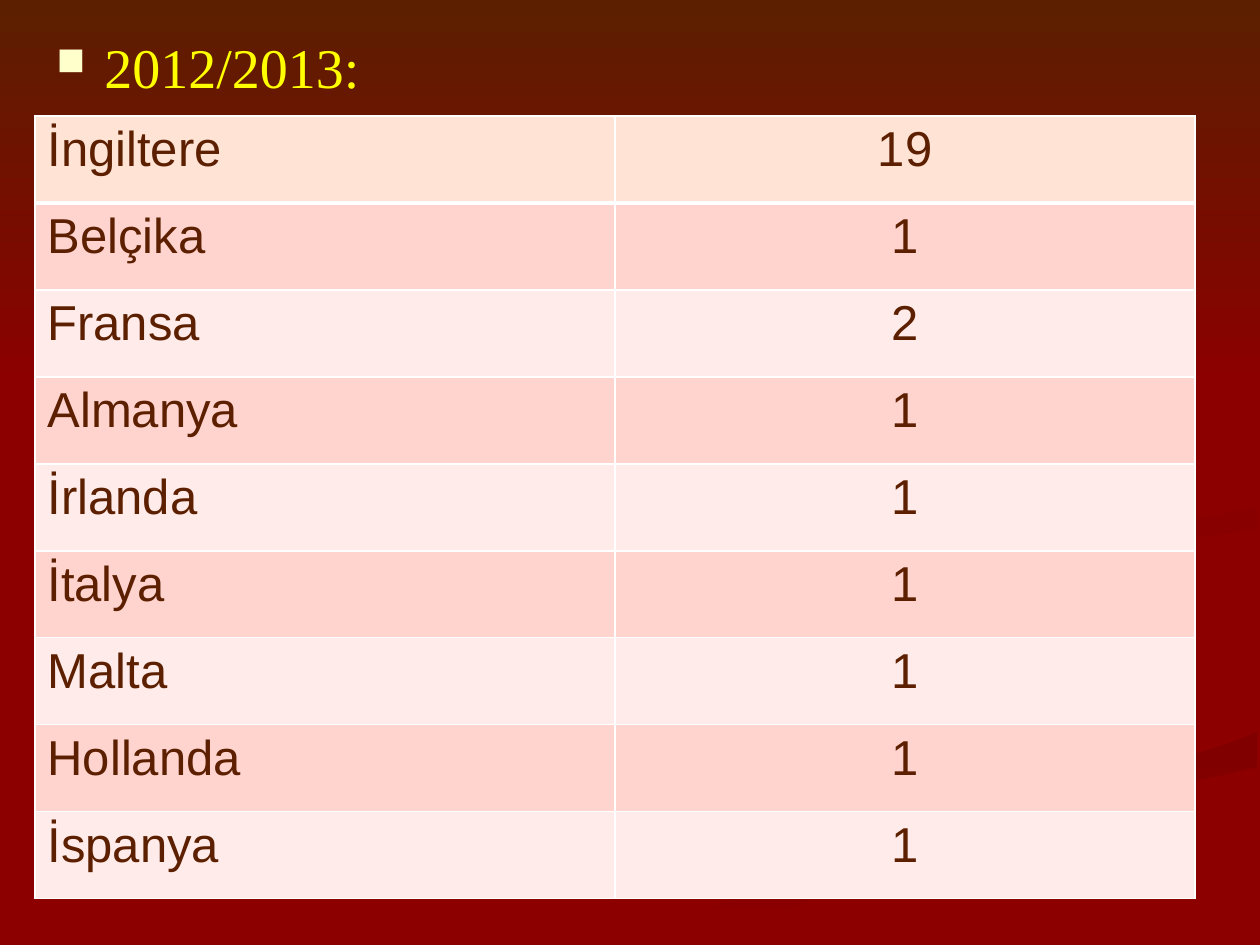
from dataclasses import dataclass

from lxml.etree import SubElement
from pptx import Presentation
from pptx.dml.color import RGBColor
from pptx.enum.shapes import MSO_SHAPE
from pptx.enum.text import PP_ALIGN
from pptx.oxml.ns import qn
from pptx.util import Emu, Pt

EMU_PER_PX = 914400 / 126


@dataclass(frozen=True)
class Theme:
    """Colours, fonts and type sizes of the slide."""
    background: str = "8C0000"
    brown: str = "5C1F00"
    ribbon_soft: str = "860000"
    ribbon_dark: str = "800000"
    ribbon_mid: str = "840000"
    heading: str = "FFFF00"
    bullet: str = "FFFFCC"
    border: str = "FFFFFF"
    first_row: str = "FFE3D5"
    bands: tuple = ("FFD4CF", "FFEBE9")
    heading_font: str = "Times New Roman"
    table_font: str = "Arial"
    heading_size: int = 32
    table_size: int = 28


THEME = Theme()

COUNTRIES = [
    ("İngiltere", 19), ("Belçika", 1), ("Fransa", 2),
    ("Almanya", 1), ("İrlanda", 1), ("İtalya", 1),
    ("Malta", 1), ("Hollanda", 1), ("İspanya", 1),
]

LEFT_RIBBON = [
    (724, 578), (718, 592), (738, 614), (795, 636), (900, 668), (960, 689),
    (987, 704), (990, 713), (975, 735), (916, 759), (776, 793), (629, 833),
    (525, 869), (426, 916), (378, 944), (455, 944), (543, 900), (629, 866),
    (748, 827), (881, 791), (969, 767), (1002, 746), (1008, 732), (998, 707),
    (966, 689), (921, 672), (809, 639), (748, 611), (726, 591),
]
LOWER_RIBBON = [
    (634, 944), (719, 944), (756, 924), (818, 895), (910, 859), (1034, 820),
    (1138, 794), (1257, 767), (1257, 732), (1230, 743), (1179, 759),
    (1047, 793), (963, 815), (877, 843), (794, 873), (717, 906), (654, 941),
]
UPPER_RIBBON = [
    (984, 580), (990, 597), (1016, 614), (1041, 625), (1019, 610),
    (1014, 597), (1023, 582), (1062, 564), (1129, 548), (1202, 537),
    (1257, 529), (1257, 507), (1218, 515), (1131, 527), (1052, 542),
    (1007, 557), (989, 571),
]


def px(length):
    """Turn pixels into EMU."""
    return Emu(round(length * EMU_PER_PX))


def rgb(value):
    """Turn a hex string into a colour."""
    return RGBColor.from_string(value)


def paint_gradient(shape, start, end, clockwise):
    """Fill a shape with a two-colour gradient, without line or shadow."""
    shape.shadow.inherit = False
    shape.line.fill.background()
    shape.fill.gradient()
    shape.fill.gradient_angle = -clockwise % 360
    for stop, color, position in zip(shape.fill.gradient_stops, (start, end), (0, 1)):
        stop.color.rgb = rgb(color)
        stop.position = position


def add_ribbon(slide, points, start, end, clockwise):
    """Draw one closed background ribbon."""
    builder = slide.shapes.build_freeform(*points[0], scale=EMU_PER_PX)
    builder.add_line_segments(points[1:], close=True)
    paint_gradient(builder.convert_to_shape(), start, end, clockwise)


def add_background(slide):
    """Paint the red ground, its ribbons and the brown fade at the top."""
    slide.background.fill.solid()
    slide.background.fill.fore_color.rgb = rgb(THEME.background)
    add_ribbon(slide, LEFT_RIBBON, THEME.background, THEME.ribbon_soft, 0)
    add_ribbon(slide, LOWER_RIBBON, THEME.ribbon_dark, THEME.background, 90)
    add_ribbon(slide, UPPER_RIBBON, THEME.ribbon_mid, THEME.background, 45)
    fade = slide.shapes.add_shape(MSO_SHAPE.RECTANGLE, 0, 0, px(1260), px(388))
    paint_gradient(fade, THEME.brown, THEME.background, 90)


def style_text(para, font, size, color):
    """Format every run of a paragraph."""
    for span in para.runs:
        span.font.name = font
        span.font.size = Pt(size)
        span.font.bold = False
        span.font.color.rgb = rgb(color)


def add_bullet(para, indent):
    """Give a paragraph a square bullet with a hanging indent."""
    properties = para._p.get_or_add_pPr()
    properties.set("marL", str(px(indent)))
    properties.set("indent", str(-px(indent)))
    color = SubElement(properties, qn("a:buClr"))
    SubElement(color, qn("a:srgbClr"), val=THEME.bullet)
    SubElement(properties, qn("a:buSzPct"), val="70000")
    SubElement(properties, qn("a:buChar"), char="■")


def add_heading(slide, text):
    """Add the bulleted heading."""
    box = slide.shapes.add_textbox(px(44), px(26), px(1170), px(893))
    box.text_frame.word_wrap = True
    para = box.text_frame.paragraphs[0]
    para.text = text
    para.space_before = Pt(6)
    add_bullet(para, 48)
    style_text(para, THEME.heading_font, THEME.heading_size, THEME.heading)


def add_borders(cell, top, bottom):
    """Draw the four borders of a cell, with widths in points."""
    properties = cell._tc.get_or_add_tcPr()
    for tag, width in (("a:lnL", 1), ("a:lnR", 1), ("a:lnT", top), ("a:lnB", bottom)):
        line = SubElement(properties, qn(tag), w=str(Pt(width)))
        fill = SubElement(line, qn("a:solidFill"))
        SubElement(fill, qn("a:srgbClr"), val=THEME.border)


def add_country_table(slide):
    """Add the table of countries and their counts."""
    table = slide.shapes.add_table(
        len(COUNTRIES), 2, px(35), px(116), px(1160), px(87 * len(COUNTRIES))
    ).table
    for index, values in enumerate(COUNTRIES):
        color = THEME.bands[(index - 1) % 2] if index else THEME.first_row
        for column, value in enumerate(values):
            cell = table.cell(index, column)
            add_borders(cell, 3 if index == 1 else 1, 3 if index == 0 else 1)
            cell.fill.solid()
            cell.fill.fore_color.rgb = rgb(color)
            para = cell.text_frame.paragraphs[0]
            para.text = str(value)
            para.alignment = PP_ALIGN.CENTER if column else PP_ALIGN.LEFT
            style_text(para, THEME.table_font, THEME.table_size, THEME.brown)


def main():
    """Build the slide and save it."""
    deck = Presentation()
    deck.slide_width, deck.slide_height = px(1260), px(945)
    page = deck.slides.add_slide(deck.slide_layouts[6])
    add_background(page)
    add_heading(page, "2012/2013:")
    add_country_table(page)
    deck.save("out.pptx")


if __name__ == "__main__":
    main()
